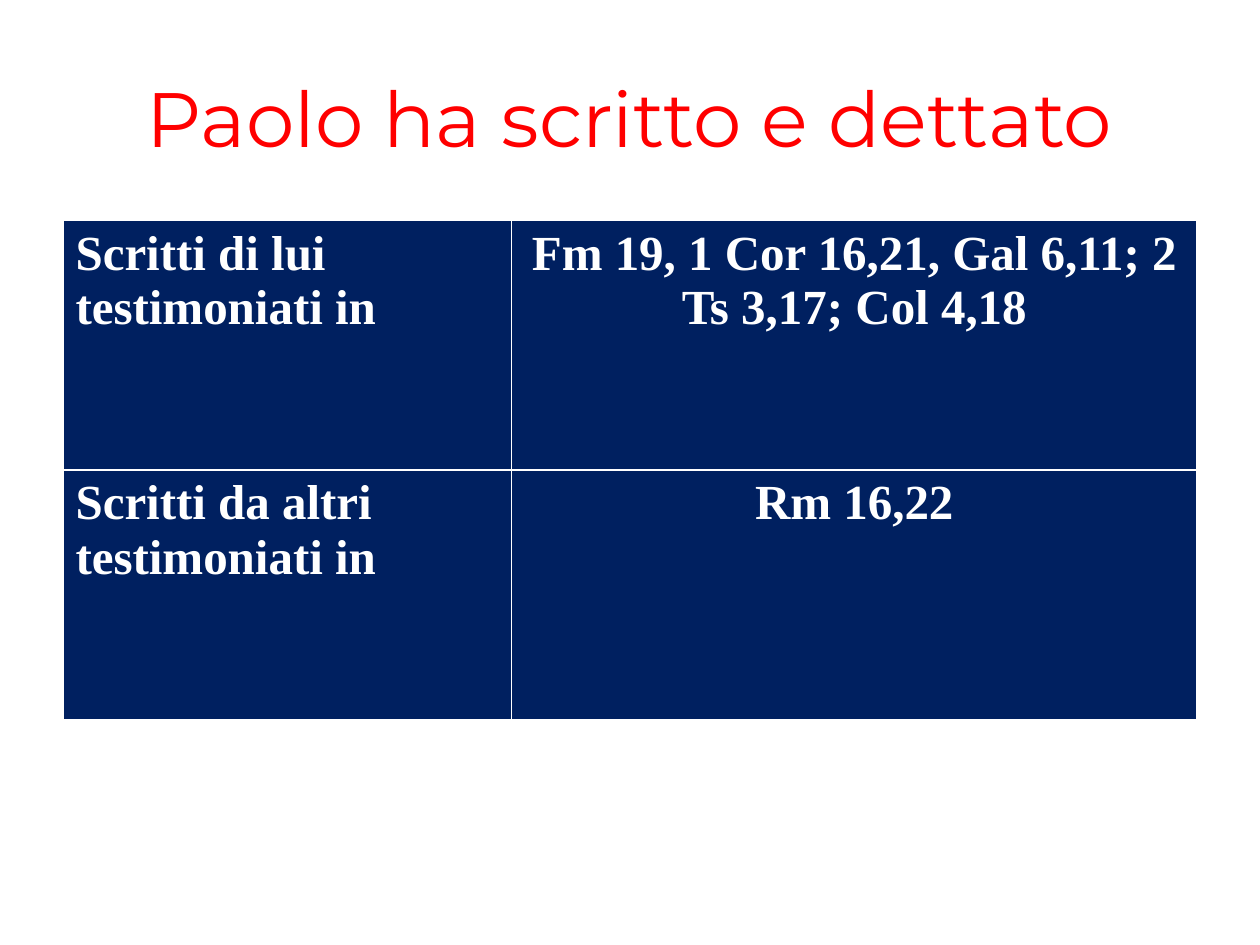
from dataclasses import dataclass

from pptx import Presentation
from pptx.dml.color import RGBColor
from pptx.enum.text import MSO_ANCHOR, PP_ALIGN
from pptx.slide import Slide
from pptx.text.text import TextFrame
from pptx.util import Inches, Pt

COLORS = {"title": "FF0000", "cell": "002060", "cell_text": "FFFFFF"}
TITLE_FORMAT = {"name": "Montserrat", "size": Pt(44), "bold": False}
CELL_FORMAT = {"name": "Times New Roman", "size": Pt(28), "bold": True}
COLUMN_WIDTHS = (3.56, 5.44)
ROW_HEIGHT = 1.98


@dataclass(frozen=True)
class Testimony:
    """One way of writing and the passages that attest it."""

    label: str
    passages: str


TESTIMONIES = (
    Testimony("Scritti di lui\ntestimoniati in",
              "Fm 19, 1 Cor 16,21, Gal 6,11; 2 Ts 3,17; Col 4,18"),
    Testimony("Scritti da altri testimoniati in", "Rm 16,22"),
)


def write(frame: TextFrame, text: str, font_format: dict, color: str, alignment: PP_ALIGN) -> None:
    """Fill a text frame with uniformly formatted paragraphs."""
    frame.text = text
    for paragraph in frame.paragraphs:
        paragraph.alignment = alignment
        for run in paragraph.runs:
            for attribute, value in font_format.items():
                setattr(run.font, attribute, value)
            run.font.color.rgb = RGBColor.from_string(COLORS[color])


def add_title(slide: Slide, text: str) -> None:
    """Add the centred slide title."""
    title = slide.shapes.add_textbox(Inches(0.5), Inches(0.3), Inches(9), Inches(1.25))
    title.text_frame.word_wrap = True
    title.text_frame.vertical_anchor = MSO_ANCHOR.MIDDLE
    write(title.text_frame, text, TITLE_FORMAT, "title", PP_ALIGN.CENTER)


def add_testimonies(slide: Slide, testimonies: tuple[Testimony, ...]) -> None:
    """Add the table of testimonies, one per row."""
    table = slide.shapes.add_table(
        len(testimonies), len(COLUMN_WIDTHS), Inches(0.5), Inches(1.75),
        Inches(sum(COLUMN_WIDTHS)), Inches(ROW_HEIGHT * len(testimonies)),
    ).table
    table.horz_banding = False
    for column, width in zip(table.columns, COLUMN_WIDTHS):
        column.width = Inches(width)
    for row, testimony in zip(table.rows, testimonies):
        row.height = Inches(ROW_HEIGHT)
        texts = (testimony.label, testimony.passages)
        for cell, text, alignment in zip(row.cells, texts, (PP_ALIGN.LEFT, PP_ALIGN.CENTER)):
            cell.fill.solid()
            cell.fill.fore_color.rgb = RGBColor.from_string(COLORS["cell"])
            write(cell.text_frame, text, CELL_FORMAT, "cell_text", alignment)


def main() -> None:
    """Build and save the slide."""
    presentation = Presentation()
    presentation.slide_width = Inches(10)
    presentation.slide_height = Inches(7.5)
    slide = presentation.slides.add_slide(presentation.slide_layouts[6])
    add_title(slide, "Paolo ha scritto e dettato")
    add_testimonies(slide, TESTIMONIES)
    presentation.save("out.pptx")


if __name__ == "__main__":
    main()
